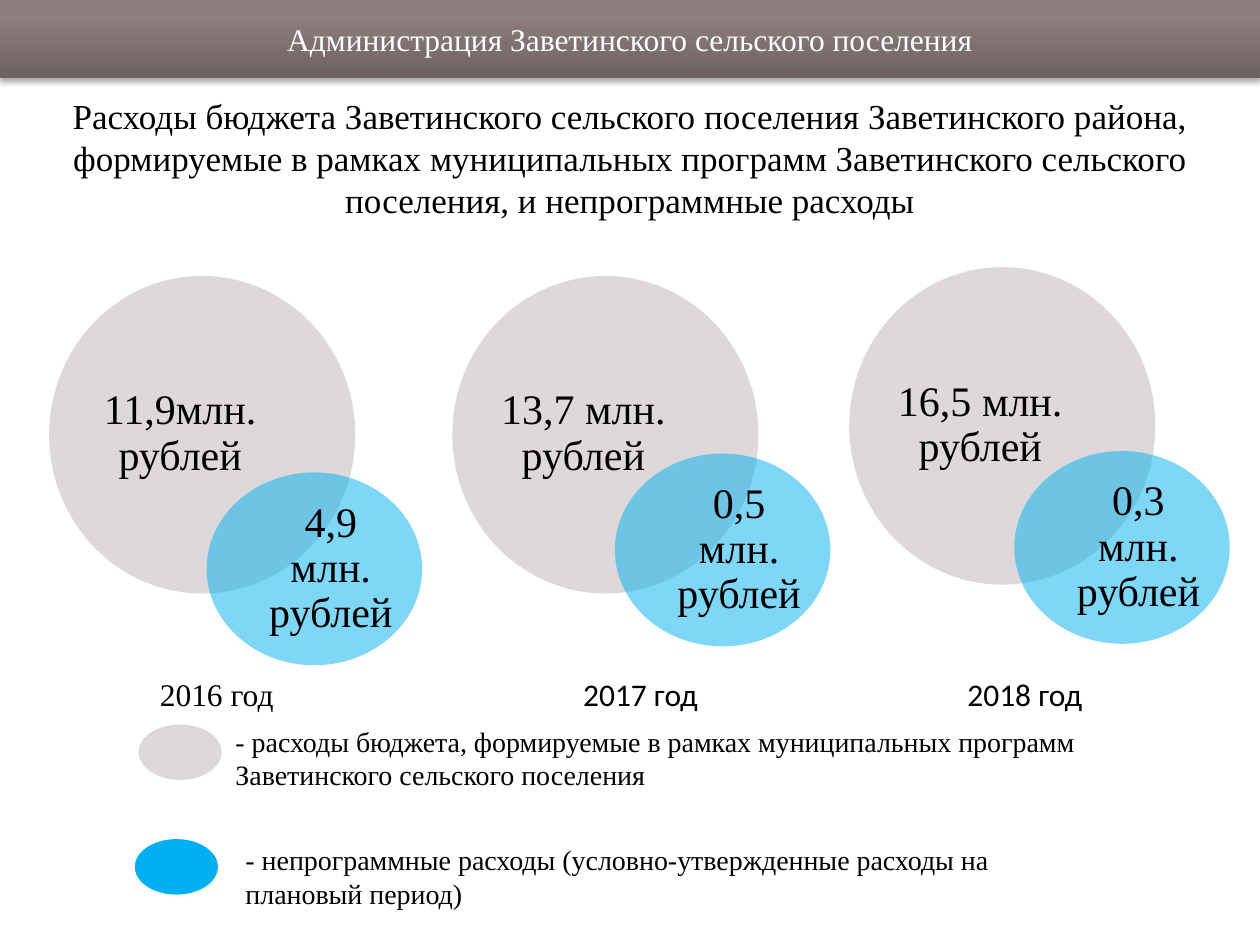
"""Build a slide on program and non-program budget spending by year."""
from typing import NamedTuple

from lxml.etree import SubElement
from pptx import Presentation
from pptx.dml.color import RGBColor
from pptx.enum.shapes import MSO_SHAPE
from pptx.enum.text import MSO_ANCHOR, MSO_AUTO_SIZE, PP_ALIGN
from pptx.oxml.ns import qn
from pptx.util import Inches, Pt

BLACK = RGBColor(0x00, 0x00, 0x00)
WHITE = RGBColor(0xFF, 0xFF, 0xFF)
GREY = RGBColor(0xBD, 0xB5, 0xB6)
BLUE = RGBColor(0x00, 0xB0, 0xF0)
DARK = RGBColor(0x6E, 0x61, 0x62)
LIGHT = RGBColor(0x8E, 0x7E, 0x7F)
SERIF = "Times New Roman"
SANS = "Calibri"


class Box(NamedTuple):
    left: float
    top: float
    width: float
    height: float


class Year(NamedTuple):
    label: str
    font: str
    label_left: float
    main: str
    main_at: tuple[float, float]
    rest: str
    rest_at: tuple[float, float]


class Key(NamedTuple):
    text: str
    area: Box
    dot_at: tuple[float, float]
    color: RGBColor
    alpha: int


YEARS = [
    Year("2016 год", SERIF, 1.17, "11,9млн. рублей", (0.39, 2.19), "4,9 млн. рублей", (1.64, 3.75)),
    Year("2017 год", SANS, 4.53, "13,7 млн. рублей", (3.59, 2.19), "0,5 млн. рублей", (4.88, 3.6)),
    Year("2018 год", SANS, 7.58, "16,5 млн. рублей", (6.74, 2.12), "0,3 млн. рублей", (8.05, 3.58)),
]
KEYS = [
    Key("- расходы бюджета, формируемые в рамках муниципальных программ "
        "Заветинского сельского поселения", Box(1.77, 5.7, 7.72, 0.64), (1.1, 5.75), GREY, 50),
    Key("- непрограммные расходы (условно-утвержденные расходы на плановый период)",
        Box(1.85, 6.64, 6.77, 0.64), (1.07, 6.66), BLUE, 100),
]


def place(box: Box) -> list[int]:
    return [Inches(side) for side in box]


def write(shape, text: str, *, size: float, font: str = SERIF, color: RGBColor = BLACK,
          align=PP_ALIGN.LEFT, anchor=MSO_ANCHOR.TOP, inset: bool = True,
          spacing: float = 1.0) -> None:
    frame = shape.text_frame
    frame.word_wrap = True
    frame.auto_size = MSO_AUTO_SIZE.NONE
    frame.vertical_anchor = anchor
    if not inset:
        frame.margin_left = frame.margin_right = frame.margin_top = frame.margin_bottom = 0
    para = frame.paragraphs[0]
    para.alignment = align
    para.line_spacing = spacing
    run = para.add_run()
    run.text = text
    run.font.size = Pt(size)
    run.font.name = font
    run.font.color.rgb = color


def add_oval(shapes, box: Box, color: RGBColor, alpha: int = 50) -> None:
    oval = shapes.add_shape(MSO_SHAPE.OVAL, *place(box))
    oval.shadow.inherit = False
    oval.line.fill.background()
    oval.fill.solid()
    oval.fill.fore_color.rgb = color
    if alpha < 100:
        tint = oval.fill._xPr.find(".//" + qn("a:srgbClr"))
        SubElement(tint, qn("a:alpha"), val=str(alpha * 1000))


def add_sum(shapes, box: Box, text: str) -> None:
    write(shapes.add_textbox(*place(box)), text, size=24, align=PP_ALIGN.CENTER,
          anchor=MSO_ANCHOR.MIDDLE, inset=False, spacing=0.9)


def add_year(shapes, year: Year) -> None:
    group = shapes.add_group_shape().shapes
    left, top = year.main_at
    add_oval(group, Box(left, top, 2.43, 2.52), GREY)
    add_sum(group, Box(left + 0.34, top + 0.29, 1.4, 1.93), year.main)
    left, top = year.rest_at
    add_oval(group, Box(left, top, 1.71, 1.53), BLUE)
    add_sum(group, Box(left + 0.49, top + 0.18, 0.99, 1.17), year.rest)
    label = shapes.add_textbox(*place(Box(year.label_left, 5.31, 1.56, 0.4)))
    write(label, year.label, size=18, font=year.font)


def add_key(shapes, key: Key) -> None:
    add_oval(shapes, Box(*key.dot_at, 0.66, 0.44), key.color, key.alpha)
    write(shapes.add_textbox(*place(key.area)), key.text, size=16)


def add_bar(shapes, box: Box, text: str) -> None:
    bar = shapes.add_shape(MSO_SHAPE.RECTANGLE, *place(box))
    bar.line.fill.background()
    bar.fill.gradient()
    bar.fill.gradient_angle = 90
    for stop, color, spot in zip(bar.fill.gradient_stops, (DARK, LIGHT), (0, 0.8)):
        stop.color.rgb = color
        stop.position = spot
    bar.shadow.inherit = False
    effects = bar._element.spPr.find(qn("a:effectLst"))
    shade = SubElement(effects, qn("a:outerShdw"), blurRad=str(Pt(3.1)), dist=str(Pt(1.8)),
                       dir="5400000", rotWithShape="0")
    tint = SubElement(shade, qn("a:srgbClr"), val="000000")
    SubElement(tint, qn("a:alpha"), val="35000")
    write(bar, text, size=18, color=WHITE, align=PP_ALIGN.CENTER, anchor=MSO_ANCHOR.MIDDLE)


def main() -> None:
    deck = Presentation()
    deck.slide_width, deck.slide_height = Inches(10), Inches(7.5)
    shapes = deck.slides.add_slide(deck.slide_layouts[5]).shapes
    title = shapes.title
    title.left, title.top, title.width, title.height = place(Box(0, 0.7, 10, 1.11))
    write(title, "Расходы бюджета Заветинского сельского поселения Заветинского района, "
          "формируемые в рамках муниципальных программ Заветинского сельского поселения, "
          "и непрограммные расходы", size=20, align=PP_ALIGN.CENTER)
    add_bar(shapes, Box(0, 0, 10, 0.62), "Администрация Заветинского сельского поселения")
    for year in YEARS:
        add_year(shapes, year)
    for key in KEYS:
        add_key(shapes, key)
    deck.save("out.pptx")


if __name__ == "__main__":
    main()
